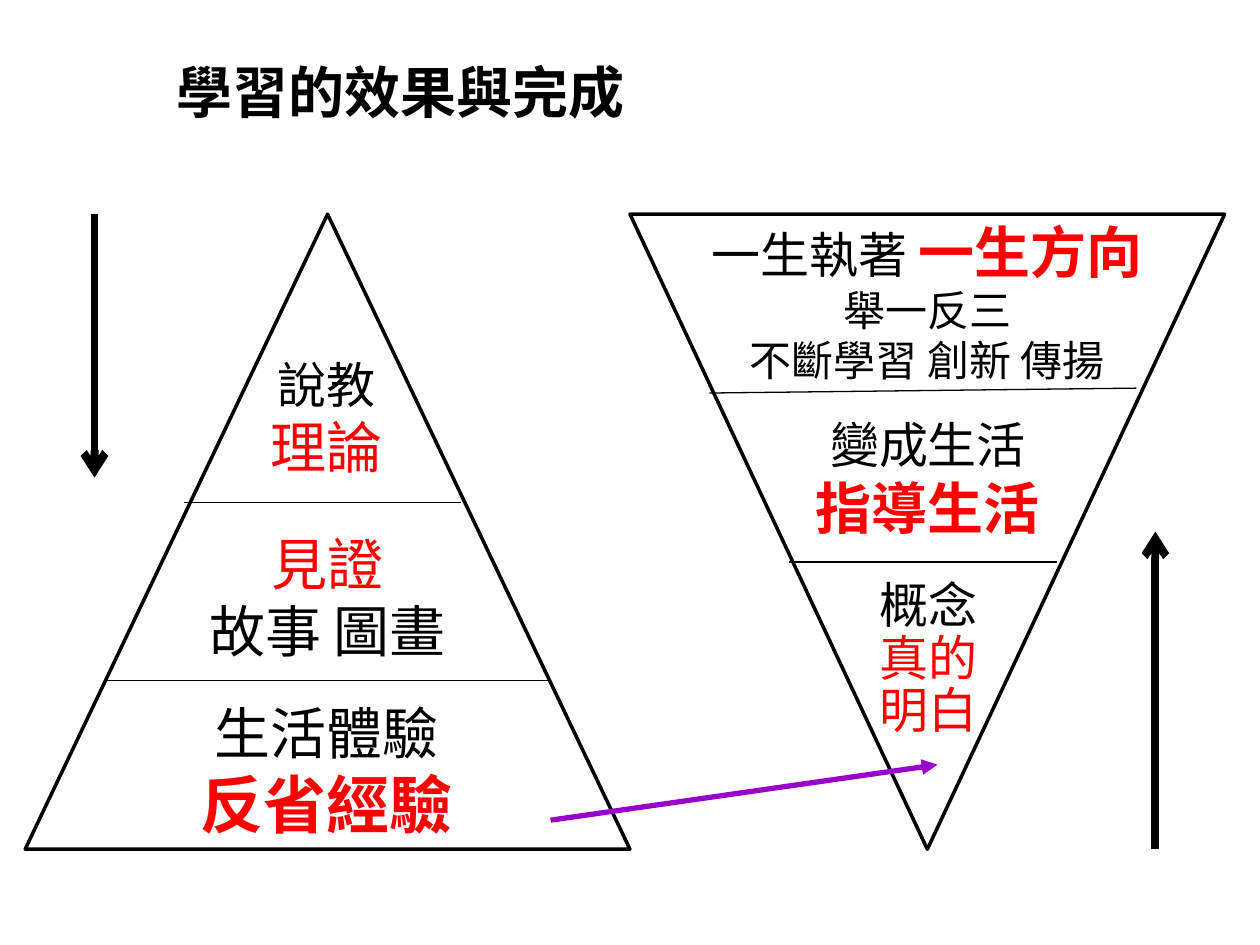
import pptx
import pptx.dml.color
import pptx.enum.shapes
import pptx.enum.text
import pptx.oxml
import pptx.oxml.ns
import pptx.util

Pt = pptx.util.Pt
FONT = "Noto Sans CJK SC"
BLACK, RED, PURPLE = "000000", "FF0000", "9900CC"
PYRAMID_TOP, PYRAMID_HEIGHT = 122.4, 362.9

PYRAMIDS = [(14.4, 345.6, 0), (360, 339.8, 180)]
DIVIDERS = [
    (105.1, 287.3, 263.5, 287.3),
    (59.8, 388.8, 314.6, 388.8),
    (405.4, 224.6, 649.4, 221.8),
    (450.7, 321.1, 604.1, 321.1),
]
ARROWS = [
    ((54, 122.4, 54, 272.9), BLACK, 4.5, "arrow"),
    ((660.2, 485.3, 660.2, 303.8), BLACK, 4.5, "arrow"),
    ((314.6, 468.7, 535.7, 437), PURPLE, 3, "triangle"),
]
LABELS = [
    ((146.9, 195.8, 79.2, 79.9), [
        [("說教", 28, BLACK, False)],
        [("理論", 32, RED, False)],
    ]),
    ((87.8, 295.9, 198.7, 85), [
        [("見證", 32, RED, False)],
        [("故事 圖畫", 32, BLACK, False)],
    ]),
    ((76.3, 392.4, 221, 90), [
        [("生活體驗", 32, BLACK, False)],
        [("反省經驗", 36, RED, True)],
    ]),
    ((360, 117.4, 339.8, 104.4), [
        [("一生執著 ", 28, BLACK, False), ("一生方向", 32, RED, True)],
        [("舉一反三", 24, BLACK, False)],
        [("不斷學習 創新 傳揚", 24, BLACK, False)],
    ]),
    ((445.7, 230.4, 169.2, 79.9), [
        [("變成生活", 28, BLACK, False)],
        [("指導生活", 32, RED, True)],
    ]),
    ((482.4, 321.8, 96.5, 101.5), [
        [("概念", 28, BLACK, False)],
        [("真的", 28, RED, False)],
        [("明白", 28, RED, False)],
    ]),
]


def apply_format(target, values):
    for name, value in values.items():
        setattr(target, name, value)


def color(hex_string):
    return pptx.dml.color.RGBColor.from_string(hex_string)


def add_element(parent, tag, **attributes):
    element = pptx.oxml.parse_xml(f"<{tag} {pptx.oxml.ns.nsdecls('a')}/>")
    for name, value in attributes.items():
        element.set(name, value)
    parent.append(element)


def set_line(line, hex_string, width):
    line.color.rgb = color(hex_string)
    line.width = Pt(width)


def add_run(paragraph, text, size, hex_string, bold):
    run = paragraph.add_run()
    run.text = text
    apply_format(run.font, {"name": FONT, "size": Pt(size), "bold": bold})
    run.font.color.rgb = color(hex_string)
    add_element(run.font._element, "a:ea", typeface=FONT)


def add_title(slide, text):
    title = slide.shapes.title
    apply_format(title, {"left": Pt(93.4), "top": Pt(27),
                         "width": Pt(560), "height": Pt(50)})
    apply_format(title.text_frame, {
        "word_wrap": True,
        "auto_size": pptx.enum.text.MSO_AUTO_SIZE.NONE,
        "vertical_anchor": pptx.enum.text.MSO_ANCHOR.MIDDLE,
        "margin_top": 0, "margin_bottom": 0,
    })
    paragraph = title.text_frame.paragraphs[0]
    paragraph.alignment = pptx.enum.text.PP_ALIGN.LEFT
    add_run(paragraph, text, 32, BLACK, True)


def add_pyramid(slide, left, width, rotation):
    shape = slide.shapes.add_shape(
        pptx.enum.shapes.MSO_SHAPE.ISOSCELES_TRIANGLE,
        Pt(left), Pt(PYRAMID_TOP), Pt(width), Pt(PYRAMID_HEIGHT))
    shape.rotation = rotation
    shape.shadow.inherit = False
    shape.fill.background()
    set_line(shape.line, BLACK, 2)


def add_line(slide, ends, hex_string, width, arrowhead=None):
    connector = slide.shapes.add_connector(
        pptx.enum.shapes.MSO_CONNECTOR.STRAIGHT, *map(Pt, ends))
    set_line(connector.line, hex_string, width)
    properties = connector._element.spPr
    if arrowhead:
        add_element(properties.ln, "a:tailEnd", type=arrowhead)
    add_element(properties, "a:effectLst")


def add_label(slide, box, lines):
    frame = slide.shapes.add_textbox(*map(Pt, box)).text_frame
    apply_format(frame, {"word_wrap": True, "margin_left": 0,
                         "margin_right": 0, "margin_top": Pt(6.6)})
    for index, runs in enumerate(lines):
        paragraph = frame.add_paragraph() if index else frame.paragraphs[0]
        largest = max(size for _, size, _, _ in runs)
        apply_format(paragraph, {
            "alignment": pptx.enum.text.PP_ALIGN.CENTER,
            "line_spacing": Pt(30 if index and largest == 28 else round(largest * 1.2, 1)),
        })
        for run in runs:
            add_run(paragraph, *run)


def main():
    presentation = pptx.Presentation()
    apply_format(presentation, {"slide_width": Pt(720), "slide_height": Pt(540)})
    slide = presentation.slides.add_slide(presentation.slide_layouts[5])
    add_title(slide, "學習的效果與完成")
    for pyramid in PYRAMIDS:
        add_pyramid(slide, *pyramid)
    for ends in DIVIDERS:
        add_line(slide, ends, BLACK, 0.75)
    for box, lines in LABELS:
        add_label(slide, box, lines)
    for arrow in ARROWS:
        add_line(slide, *arrow)
    presentation.save("out.pptx")


if __name__ == "__main__":
    main()
